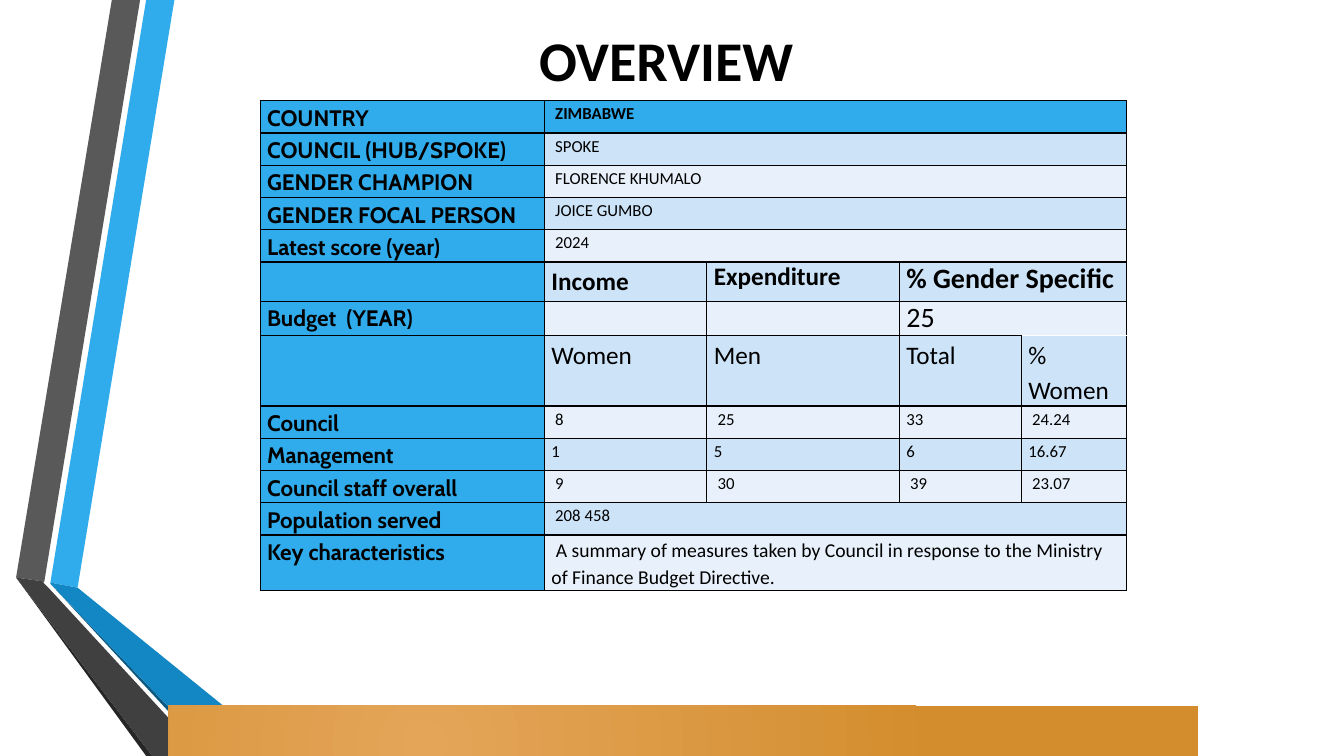
"""Build the council overview slide with its profile table."""
from dataclasses import dataclass

from pptx import Presentation
from pptx.dml import color
from pptx.enum import shapes, text
from pptx.oxml import parse_xml
from pptx.oxml import ns
from pptx.util import Inches, Pt

BLUE, BLACK, WHITE = "30ACEC", "000000", "FFFFFF"
BANDS = ("E8F1FB", "CDE3F8")
COLUMNS = (2.82, 1.61, 1.91, 1.21, 1.04)


@dataclass
class Ribbon:
    fill: str
    points: list[tuple[float, float]]


@dataclass
class Entry:
    text: str
    size: int = 12
    bold: bool = False
    spacing: float = 1.15
    font: str = "Calibri"


@dataclass
class Row:
    label: str
    entries: list[Entry]
    height: float = 0.32


RIBBONS = [
    Ribbon(BLUE, [(0.5, 5.78), (0.77, 5.83), (1.73, 0), (1.45, 0)]),
    Ribbon("595959", [(1.39, 0), (1.11, 0), (0.16, 5.73), (0.44, 5.77)]),
    Ribbon("262626", [(0.16, 5.73), (1.45, 7.5), (1.51, 7.5)]),
    Ribbon("0C5A82", [(0.5, 5.79), (2.08, 7.5), (2.14, 7.5)]),
    Ribbon("1287C3", [(0.5, 5.79), (2.14, 7.5), (2.83, 7.5), (0.77, 5.83), (0.5, 5.78)]),
    Ribbon("404040", [(2.02, 7.5), (0.48, 5.83), (0.43, 5.78), (0.44, 5.77),
                      (0.16, 5.73), (1.51, 7.5)]),
]

ROWS = [
    Row("COUNTRY", [Entry(" ZIMBABWE", bold=True)]),
    Row("COUNCIL (HUB/SPOKE)", [Entry(" SPOKE")]),
    Row("GENDER CHAMPION", [Entry(" FLORENCE KHUMALO")]),
    Row("GENDER FOCAL PERSON", [Entry(" JOICE GUMBO")]),
    Row("Latest score (year)", [Entry(" 2024")]),
    Row("", [Entry("Income", 18, True), Entry("Expenditure", 18, True, 1),
             Entry("% Gender Specific", 20, True, 1)], 0.39),
    Row("Budget  (YEAR)", [Entry(""), Entry(""), Entry("25", 20, spacing=1)], 0.34),
    Row("", [Entry(t, 18) for t in ("Women", "Men", "Total", "% Women")], 0.7),
    Row("Council", [Entry(t) for t in (" 8", " 25", "33", " 24.24")]),
    Row("Management", [Entry(t) for t in ("1", "5", "6", "16.67")]),
    Row("Council staff overall", [Entry(t) for t in (" 9", " 30", " 39", " 23.07")]),
    Row("Population served", [Entry(" 208 458")]),
    Row("Key characteristics", [Entry(
        " A summary of measures taken by Council in response to the Ministry "
        "of Finance Budget Directive.", 14)], 0.55),
]


def rgb(value: str) -> color.RGBColor:
    return color.RGBColor.from_string(value)


def add_ribbon(s, ribbon: Ribbon) -> None:
    points = [(Inches(x), Inches(y)) for x, y in ribbon.points]
    builder = s.shapes.build_freeform(*points[0], scale=1.0)
    builder.add_line_segments(points[1:], close=True)
    sp = builder.convert_to_shape()
    sp.shadow.inherit = False
    sp.fill.solid()
    sp.fill.fore_color.rgb = rgb(ribbon.fill)
    sp.line.fill.background()


def write(tf, entry: Entry) -> None:
    p = tf.paragraphs[0]
    p.text = entry.text
    p.line_spacing = entry.spacing
    for r in p.runs:
        r.font.name = entry.font
        r.font.size = Pt(entry.size)
        r.font.bold = entry.bold
        r.font.color.rgb = rgb(BLACK)


def set_borders(cell, top: str, bottom: str) -> None:
    tc_pr = cell._tc.get_or_add_tcPr()
    for side, line in (("L", BLACK), ("R", BLACK), ("T", top), ("B", bottom)):
        tc_pr.append(parse_xml(
            f'<a:ln{side} {ns.nsdecls("a")} w="12700"><a:solidFill>'
            f'<a:srgbClr val="{line}"/></a:solidFill></a:ln{side}>'))


def add_title(s, title: str) -> None:
    sp = s.shapes.add_textbox(Inches(2.17), Inches(0.17), Inches(9), Inches(0.83))
    tf = sp.text_frame
    tf.word_wrap = True
    tf.vertical_anchor = text.MSO_ANCHOR.MIDDLE
    write(tf, Entry(title, 40, True, 1))
    tf.paragraphs[0].alignment = text.PP_ALIGN.CENTER


def add_profile(s) -> None:
    height = sum(row.height for row in ROWS)
    table = s.shapes.add_table(len(ROWS), len(COLUMNS), Inches(2.58), Inches(1),
                               Inches(sum(COLUMNS)), Inches(height)).table
    table.first_row = table.horz_banding = False
    for column, width in zip(table.columns, COLUMNS):
        column.width = Inches(width)
    last = len(COLUMNS) - 1
    open_row = next(i for i, row in enumerate(ROWS) if row.label.startswith("Budget"))
    for i, row in enumerate(ROWS):
        table.rows[i].height = Inches(row.height)
        for j in range(len(COLUMNS)):
            cell = table.cell(i, j)
            cell.margin_left = cell.margin_right = Inches(0.07)
            cell.margin_top = cell.margin_bottom = 0
            top = WHITE if (i, j) == (open_row + 1, last) else BLACK
            bottom = WHITE if (i, j) == (open_row, last) else BLACK
            set_borders(cell, top, bottom)
            cell.fill.solid()
            cell.fill.fore_color.rgb = rgb(BLUE if i == 0 or j == 0 else BANDS[i % 2])
        entries = [Entry(row.label, 16, True, font="Cabin"), *row.entries]
        for j, entry in enumerate(entries):
            write(table.cell(i, j).text_frame, entry)
        if len(row.entries) < last:
            table.cell(i, len(row.entries)).merge(table.cell(i, last))


def add_footer(s) -> None:
    sp = s.shapes.add_shape(shapes.MSO_SHAPE.RECTANGLE, Inches(1.67), Inches(7),
                            Inches(10.21), Inches(0.51))
    sp.shadow.inherit = False
    sp.line.fill.background()
    sp.fill.gradient()
    for stop, shade in zip(sp.fill.gradient_stops, ("E4A559", "D38D2D")):
        stop.color.rgb = rgb(shade)
    linear = sp._element.spPr.find(".//" + ns.qn("a:lin"))
    linear.getparent().replace(linear, parse_xml(
        f'<a:path {ns.nsdecls("a")} path="circle">'
        '<a:fillToRect l="50000" t="100000" r="100000" b="50000"/></a:path>'))


def main() -> None:
    prs = Presentation()
    prs.slide_width, prs.slide_height = Inches(13.33), Inches(7.5)
    s = prs.slides.add_slide(prs.slide_layouts[6])
    for ribbon in RIBBONS:
        add_ribbon(s, ribbon)
    add_title(s, "OVERVIEW ")
    add_profile(s)
    add_footer(s)
    prs.save("out.pptx")


if __name__ == "__main__":
    main()
